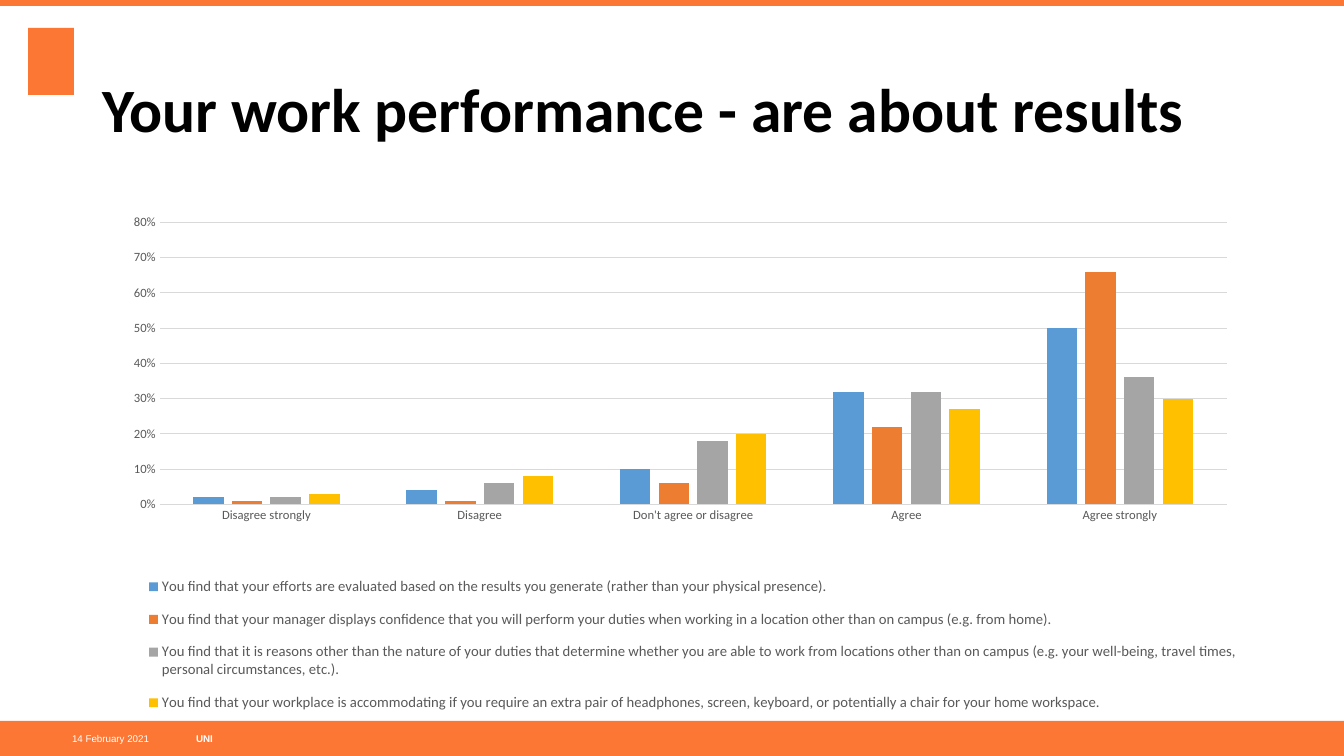
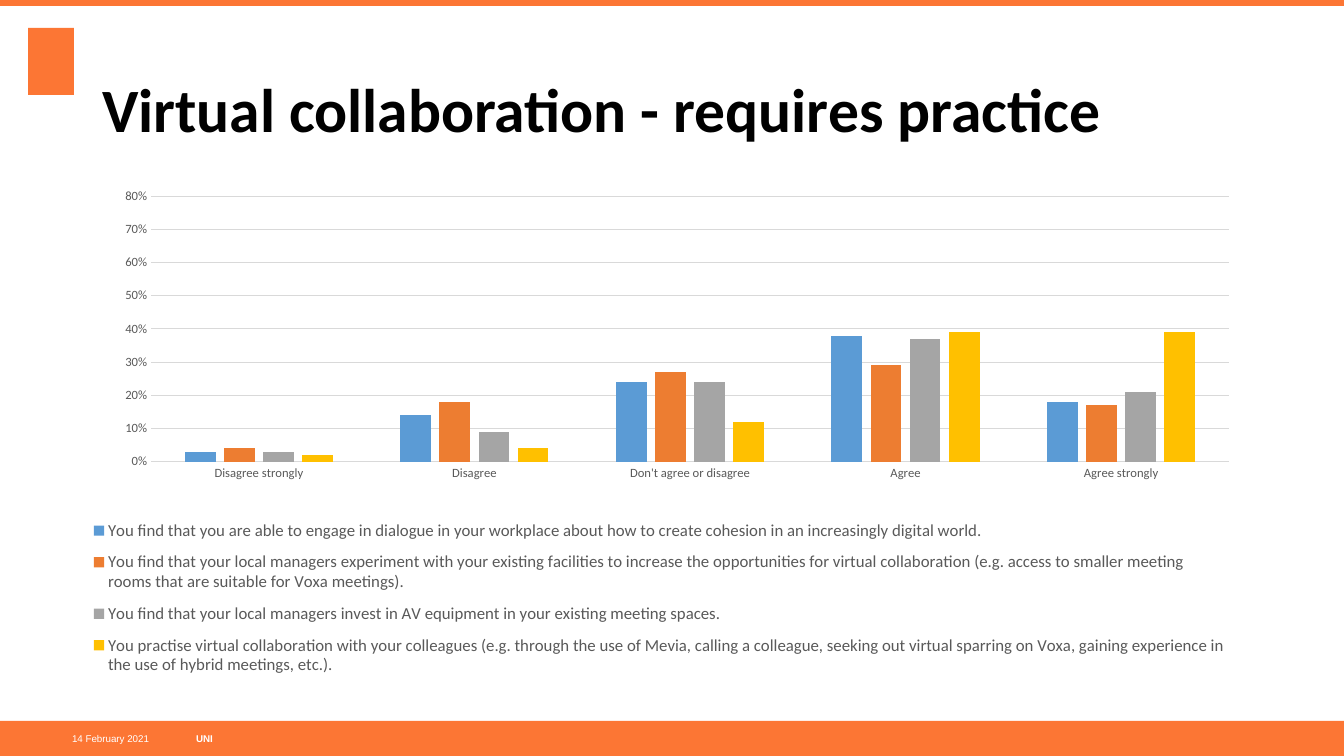
from dataclasses import dataclass

from lxml import etree
from pptx import Presentation
from pptx import util as u
from pptx.chart.data import CategoryChartData
from pptx.dml.color import RGBColor
from pptx.enum import chart as charts, shapes, text
from pptx.oxml.ns import qn

SLIDE_W, SLIDE_H = 1344, 756
EMU_PER_PX = 12192000 / SLIDE_W

ORANGE, WHITE, BLACK = "FC7634", "FFFFFF", "000000"
LABEL_GREY, GRID_GREY = "595959", "D9D9D9"
SERIES_COLOURS = ("5B9BD5", "ED7D31", "A5A5A5", "FFC000")
HEADING_FONT, FOOTER_FONT = "Calibri", "Arial"
TITLE_ONLY = 5
ANSWERS = ("Disagree strongly", "Disagree", "Don't agree or disagree",
           "Agree", "Agree strongly")


@dataclass(frozen=True)
class Box:
    left: int
    top: int
    width: int
    height: int

    def emu(self) -> tuple[u.Emu, ...]:
        return tuple(px(n) for n in (self.left, self.top, self.width, self.height))


@dataclass(frozen=True)
class Area:
    """Part of a chart, as fractions of its width and height."""
    x: float
    y: float
    w: float
    h: float


@dataclass(frozen=True)
class Statement:
    wording: str
    percents: tuple[int, ...]


@dataclass(frozen=True)
class Survey:
    title: str
    box: Box
    plot: Area
    legend: Area
    legend_size: float
    statements: tuple[Statement, ...]


TITLE_BOX = Box(92, 40, 1159, 146)
BLOCKS = (
    Box(0, 0, SLIDE_W, 6),
    Box(0, 721, SLIDE_W, 35),
    Box(28, 28, 46, 67),
)
DATE_BOX = Box(27, 721, 122, 35)
OWNER_BOX = Box(196, 721, 375, 35)

SURVEYS = (
    Survey(
        "Your work performance - are about results",
        Box(101, 171, 1151, 585),
        Area(0.051, 0.088, 0.927, 0.482), Area(0.04, 0.67, 0.95, 0.28), 10.5,
        (
            Statement("You find that your efforts are evaluated based on the results "
                      "you generate (rather than your physical presence).",
                      (2, 4, 10, 32, 50)),
            Statement("You find that your manager displays confidence that you will "
                      "perform your duties when working in a location other than on "
                      "campus (e.g. from home).",
                      (1, 1, 6, 22, 66)),
            Statement("You find that it is reasons other than the nature of your duties "
                      "that determine whether you are able to work from locations other "
                      "than on campus (e.g. your well-being, travel times, personal "
                      "circumstances, etc.).",
                      (2, 6, 18, 32, 36)),
            Statement("You find that your workplace is accommodating if you require an "
                      "extra pair of headphones, screen, keyboard, or potentially a "
                      "chair for your home workspace.",
                      (3, 8, 20, 27, 30)),
        ),
    ),
    Survey(
        "Virtual collaboration - requires practice",
        Box(92, 131, 1159, 573),
        Area(0.051, 0.114, 0.93, 0.463), Area(0, 0.66, 0.98, 0.31), 12,
        (
            Statement("You find that you are able to engage in dialogue in your workplace "
                      "about how to create cohesion in an increasingly digital world.",
                      (3, 14, 24, 38, 18)),
            Statement("You find that your local managers experiment with your existing "
                      "facilities to increase the opportunities for virtual collaboration "
                      "(e.g. access to smaller meeting rooms that are suitable for Voxa "
                      "meetings).",
                      (4, 18, 27, 29, 17)),
            Statement("You find that your local managers invest in AV equipment in your "
                      "existing meeting spaces.",
                      (3, 9, 24, 37, 21)),
            Statement("You practise virtual collaboration with your colleagues (e.g. "
                      "through the use of Mevia, calling a colleague, seeking out virtual "
                      "sparring on Voxa, gaining experience in the use of hybrid meetings, "
                      "etc.).",
                      (2, 4, 12, 39, 39)),
        ),
    ),
)


def px(n: int) -> u.Emu:
    return u.Emu(round(n * EMU_PER_PX))


def colour(code: str) -> RGBColor:
    return RGBColor.from_string(code)


def style_font(font, name: str, size: float, code: str, bold: bool = False) -> None:
    font.name, font.size, font.bold = name, u.Pt(size), bold
    font.color.rgb = colour(code)


def style_line(line, code: str) -> None:
    line.color.rgb = colour(code)
    line.width = u.Pt(0.75)


def add_block(slide, box: Box) -> None:
    block = slide.shapes.add_shape(shapes.MSO_SHAPE.RECTANGLE, *box.emu())
    block.shadow.inherit = False
    block.fill.solid()
    block.fill.fore_color.rgb = colour(ORANGE)
    block.line.fill.background()


def add_footer(slide, box: Box, words: str, align, bold: bool = False) -> None:
    frame = slide.shapes.add_textbox(*box.emu()).text_frame
    frame.word_wrap = True
    frame.margin_left = frame.margin_right = frame.margin_top = frame.margin_bottom = 0
    frame.vertical_anchor = text.MSO_ANCHOR.MIDDLE
    paragraph = frame.paragraphs[0]
    paragraph.alignment = align
    run = paragraph.add_run()
    run.text = words
    style_font(run.font, FOOTER_FONT, 7, WHITE, bold)


def set_title(slide, words: str) -> None:
    title = slide.shapes.title
    title.left, title.top, title.width, title.height = TITLE_BOX.emu()
    frame = title.text_frame
    frame.word_wrap = True
    frame.auto_size = text.MSO_AUTO_SIZE.NONE
    frame.vertical_anchor = text.MSO_ANCHOR.MIDDLE
    paragraph = frame.paragraphs[0]
    paragraph.alignment = text.PP_ALIGN.LEFT
    paragraph.line_spacing = 0.9
    run = paragraph.add_run()
    run.text = words
    style_font(run.font, HEADING_FONT, 44, BLACK, bold=True)


def manual_layout(area: Area, inner: bool = False):
    """Return a c:layout element that fixes the place of a chart part."""
    layout = etree.Element(qn("c:layout"))
    manual = etree.SubElement(layout, qn("c:manualLayout"))
    settings = [("layoutTarget", "inner")] if inner else []
    settings += [("xMode", "edge"), ("yMode", "edge")]
    settings += [(side, str(getattr(area, side))) for side in "xywh"]
    for tag, value in settings:
        etree.SubElement(manual, qn(f"c:{tag}")).set("val", value)
    return layout


def place_parts(chart, survey: Survey) -> None:
    plot_area = chart.element.find(".//" + qn("c:plotArea"))
    for automatic in plot_area.findall(qn("c:layout")):
        plot_area.remove(automatic)
    plot_area.insert(0, manual_layout(survey.plot, inner=True))
    legend = chart.element.find(".//" + qn("c:legend"))
    for automatic in legend.findall(qn("c:layout")):
        legend.remove(automatic)
    legend.find(qn("c:legendPos")).addnext(manual_layout(survey.legend))


def style_axes(chart) -> None:
    answers, shares = chart.category_axis, chart.value_axis
    for axis in (answers, shares):
        axis.major_tick_mark = axis.minor_tick_mark = charts.XL_TICK_MARK.NONE
        style_font(axis.tick_labels.font, HEADING_FONT, 9, LABEL_GREY)
    style_line(answers.format.line, GRID_GREY)
    shares.format.line.fill.background()
    shares.minimum_scale, shares.maximum_scale, shares.major_unit = 0, 0.8, 0.1
    shares.has_major_gridlines = True
    style_line(shares.major_gridlines.format.line, GRID_GREY)
    shares.tick_labels.number_format = "0%"
    shares.tick_labels.number_format_is_linked = False


def add_survey_chart(slide, survey: Survey) -> None:
    data = CategoryChartData(number_format="0%")
    data.categories = ANSWERS
    for statement in survey.statements:
        data.add_series(statement.wording, [p / 100 for p in statement.percents])
    chart = slide.shapes.add_chart(charts.XL_CHART_TYPE.COLUMN_CLUSTERED,
                                   *survey.box.emu(), data).chart
    style_font(chart.font, HEADING_FONT, 10, BLACK)
    chart.has_title = False
    style_axes(chart)

    plot = chart.plots[0]
    plot.vary_by_categories = False
    plot.gap_width, plot.overlap = 219, -27
    for series, code in zip(plot.series, SERIES_COLOURS):
        series.format.fill.solid()
        series.format.fill.fore_color.rgb = colour(code)

    chart.has_legend = True
    chart.legend.position = charts.XL_LEGEND_POSITION.BOTTOM
    chart.legend.include_in_layout = False
    style_font(chart.legend.font, HEADING_FONT, survey.legend_size, LABEL_GREY)
    place_parts(chart, survey)


def add_survey_slide(deck, survey: Survey) -> None:
    slide = deck.slides.add_slide(deck.slide_layouts[TITLE_ONLY])
    set_title(slide, survey.title)
    for box in BLOCKS:
        add_block(slide, box)
    add_footer(slide, DATE_BOX, "14 February 2021", text.PP_ALIGN.RIGHT)
    add_footer(slide, OWNER_BOX, "UNI", text.PP_ALIGN.LEFT, bold=True)
    add_survey_chart(slide, survey)


def main() -> None:
    deck = Presentation()
    deck.slide_width, deck.slide_height = px(SLIDE_W), px(SLIDE_H)
    for survey in SURVEYS:
        add_survey_slide(deck, survey)
    deck.save("out.pptx")


if __name__ == "__main__":
    main()
